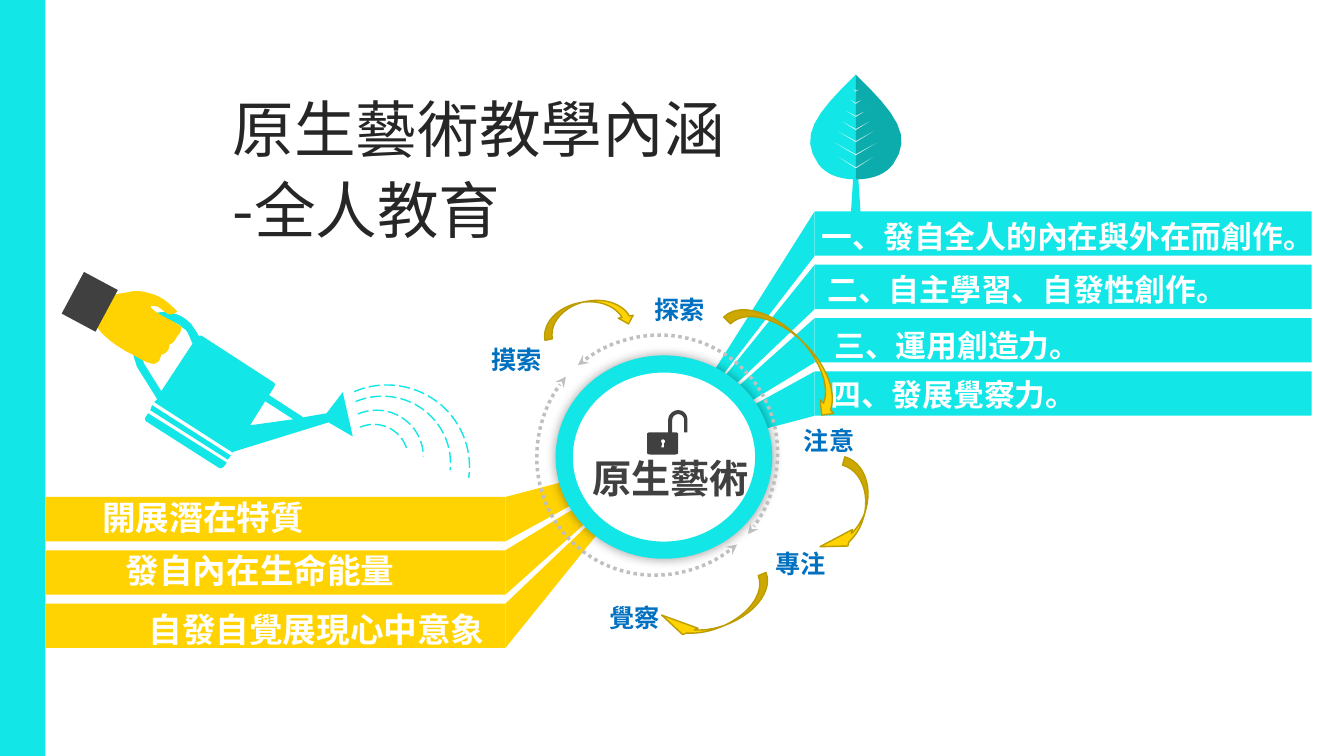
import pptx
import pptx.dml.color
import pptx.enum.dml
import pptx.enum.shapes
import pptx.enum.text
import pptx.oxml.ns
import pptx.util
from lxml import etree

Pt = pptx.util.Pt
RGBColor = pptx.dml.color.RGBColor
Preset = pptx.enum.shapes.MSO_SHAPE
Dash = pptx.enum.dml.MSO_LINE
Align = pptx.enum.text.PP_ALIGN

CYAN = RGBColor(0x12, 0xE6, 0xE6)
DARK_CYAN = RGBColor(0x0D, 0xAC, 0xAC)
YELLOW = RGBColor(0xFF, 0xD3, 0x02)
GOLD = RGBColor(0xBD, 0x9C, 0x01)
WHITE = RGBColor(0xFF, 0xFF, 0xFF)
INK = RGBColor(0x26, 0x26, 0x26)
CHARCOAL = RGBColor(0x40, 0x40, 0x40)
GRAY = RGBColor(0xBF, 0xBF, 0xBF)
BLUE = RGBColor(0x00, 0x70, 0xC0)
FONT = "Noto Sans CJK JP"

# Outlines: pairs are corners, sixes are cubic curves, all in points from the box corner.
LOCK = [
    [(11.5, 20.9), (10.1, 20.9, 10.1, 21.6, 10.1, 22.3), (10.1, 23, 10.8, 23.8, 10.8, 23.8),
     (10.1, 26.6), (12.2, 26.6), (12.2, 23.8), (12.2, 23.8, 13, 23, 13, 22.3),
     (13, 21.6, 12.2, 20.9, 11.5, 20.9)],
    [(22.3, 0), (25.9, 0, 28.8, 2.9, 28.8, 6.5), (28.8, 15.8), (26.6, 15.8), (26.6, 6.5),
     (25.9, 4.3, 24.5, 2.9, 22.3, 2.9), (20.2, 2.9, 18, 4.3, 18, 7.2), (18, 15.8), (20.2, 15.8),
     (21.6, 15.8, 22.3, 16.6, 22.3, 17.3), (22.3, 30.2), (22.3, 31, 21.6, 31.7, 20.2, 31.7),
     (2.2, 31.7), (0.7, 31.7, 0, 31, 0, 30.2), (0, 17.3), (0, 16.6, 0.7, 15.8, 2.2, 15.8),
     (15.1, 15.8), (15.1, 7.2), (15.1, 2.9, 18.7, 0, 22.3, 0)],
]
CAN = [
    [(69.8, 115.2), (126, 150.5), (123.8, 153.4), (123.1, 154.1, 121.7, 154.8, 120.2, 154.1),
     (68.4, 121), (67.7, 120.2, 67, 118.8, 68.4, 117.4)],
    [(72.7, 109.4), (128.9, 145.4), (126.7, 148.3), (71.3, 113)],
    [(153.4, 106.6), (142.6, 123.8), (173.5, 119.5)],
    [(92.9, 52.6), (90, 50.4, 85.7, 49, 81.4, 49), (77.8, 49, 74.9, 49, 72, 51.1),
     (67.7, 54, 64.8, 58.3, 64.1, 63.4), (63.4, 67.7), (64.1, 71.3, 65.5, 75.6, 67, 79.9),
     (79.2, 99.4), (101.5, 65.5), (99.4, 60.5), (98.6, 59, 97.9, 56.9, 96.5, 55.4),
     (95, 54.7, 94.3, 54, 92.9, 52.6)],
    [(208.8, 100.1), (216, 131.8), (198.7, 121.7), (131, 142.6), (130.3, 143.3), (74.2, 107.3),
     (76.3, 105.1), (61.9, 82.1), (60.5, 77.8), (59, 73.4, 58.3, 69.8, 58.3, 65.5),
     (58.3, 61.9, 58.3, 59, 60.5, 56.2), (63.4, 50.4, 68.4, 46.1, 74.2, 43.9),
     (80.6, 41.8, 89.3, 43.2, 95, 46.8), (97.2, 48.2, 99.4, 50.4, 100.8, 51.8),
     (102.2, 54, 103.7, 56.2, 105.1, 58.3), (105.8, 59.8), (108, 59.8), (159.1, 92.9),
     (160.6, 93.6, 160.6, 95, 159.8, 96.5), (156.2, 102.2), (180.7, 118.1), (197.3, 115.2)],
]
HAND = [
    [(90.7, 42.5), (83.5, 49, 79.9, 38.9, 75.6, 38.9), (73.4, 38.2, 70.6, 38.2, 72, 39.6),
     (72, 41, 79.2, 45.4, 86.4, 49), (93.6, 53.3), (93.6, 56.2, 92.2, 59, 90.7, 59.8),
     (88.6, 64.1, 87.8, 64.8, 85, 66.2), (85, 70.6, 82.1, 72.7, 79.2, 73.4),
     (77.8, 77.8, 77.8, 78.5, 74.2, 79.9), (70.6, 79.9, 66.2, 77.8, 59, 73.4),
     (55.4, 72, 39.6, 63.4, 33.1, 53.3), (30.2, 49, 29.5, 49.7, 27.4, 49), (38.9, 27.4),
     (42.5, 28.8, 43.2, 31, 47.5, 30.2), (49.7, 29.5, 52.6, 29.5, 58.3, 28.1),
     (64.8, 27.4, 68.4, 28.8, 73.4, 30.2), (79.9, 32.4, 84.2, 36, 90.7, 42.5)],
]
VEINS = [(11.5, 3.6, 9.4), (20.2, 6.5, 16.6), (29.5, 10.8, 23.8), (38.9, 16.6, 29.5),
         (47.5, 21.6, 35.3), (56.9, 25.9, 42.5), (66.2, 21.6, 53.3)]


def set_values(target, values):
    for name, value in values.items():
        setattr(target, name, value)


def paint(shape, fill=None, line=None, width=1, dash=None):
    shape.shadow.inherit = False
    for part, color in ((shape.fill, fill), (shape.line.fill, line)):
        if color is None:
            part.background()
        else:
            part.solid()
            part.fore_color.rgb = color
    if line is not None:
        set_values(shape.line, {"width": Pt(width), "dash_style": dash})


def add_preset(slide, preset, box, rotation=0, adjustments=(), **style):
    shape = slide.shapes.add_shape(preset, *(Pt(length) for length in box))
    shape.rotation = rotation
    for index, value in enumerate(adjustments):
        shape.adjustments[index] = value
    paint(shape, **style)
    return shape


def flatten(outline, steps=8):
    """Turn corners and cubic curves into a list of points."""
    points = []
    for item in outline:
        if len(item) == 2:
            points.append(item)
            continue
        control = [points[-1], item[:2], item[2:4], item[4:]]
        for step in range(1, steps + 1):
            t = step / steps
            weights = ((1 - t) ** 3, 3 * t * (1 - t) ** 2, 3 * t * t * (1 - t), t ** 3)
            points.append(tuple(sum(w * p[axis] for w, p in zip(weights, control)) for axis in (0, 1)))
    return points


def add_outline(slide, outlines, left, top, color, mirror=1):
    builder = None
    for outline in outlines:
        points = [(Pt(left + mirror * x), Pt(top + y)) for x, y in flatten(outline)]
        if builder is None:
            builder = slide.shapes.build_freeform(*points[0])
        else:
            builder.move_to(*points[0])
        builder.add_line_segments(points[1:], close=True)
    paint(builder.convert_to_shape(), fill=color)


def write(paragraph, text, size, color, bold=True):
    run = paragraph.add_run()
    run.text = text
    set_values(run.font, {"name": FONT, "size": Pt(size), "bold": bold})
    run.font.color.rgb = color
    east_asian = etree.SubElement(run.font._element, pptx.oxml.ns.qn("a:ea"))
    east_asian.set("typeface", FONT)


def add_label(slide, box, text, size, color, alignment=Align.LEFT):
    frame = slide.shapes.add_textbox(*(Pt(length) for length in box)).text_frame
    frame.word_wrap = True
    frame.paragraphs[0].alignment = alignment
    write(frame.paragraphs[0], text, size, color)


def add_title(slide, box, lines):
    title = slide.shapes.title
    set_values(title, dict(zip(("left", "top", "width", "height"), map(Pt, box))))
    frame = title.text_frame
    set_values(frame, {"word_wrap": True, "auto_size": pptx.enum.text.MSO_AUTO_SIZE.NONE,
                       "vertical_anchor": pptx.enum.text.MSO_ANCHOR.MIDDLE})
    for index, line in enumerate(lines):
        paragraph = frame.add_paragraph() if index else frame.paragraphs[0]
        set_values(paragraph, {"alignment": Align.LEFT, "line_spacing": 0.9,
                               "space_before": Pt(10 if index else 0)})
        write(paragraph, line, 44, INK, bold=False)


def add_bands(slide, box, inner, hub, color, size, labels):
    """Stack bands in the box, each with a wedge from its inner side to the hub."""
    left, top, width, pitch = box
    height = 31.7
    for row in range(len(labels)):
        y = top + row * pitch
        add_preset(slide, Preset.RECTANGLE, (left, y, width, height), fill=color)
        add_outline(slide, [[(inner, y), hub, (inner, y + height)]], 0, 0, color)
    for row, (dx, dy, label_width, text) in enumerate(labels):
        add_label(slide, (left + dx, top + row * pitch + dy, label_width, 35), text, size, WHITE)


def add_watering_can(slide, left, top):
    add_outline(slide, CAN, left, top, CYAN)
    add_outline(slide, HAND, left, top, YELLOW)
    add_preset(slide, Preset.RECTANGLE, (left + 14.4, top + 18.7, 27.4, 33.8), 28.2, fill=CHARCOAL)
    for x, y, width, height, end in ((181.4, 95, 118, 116.6, 4.71), (188.6, 103, 97.2, 95.8, 3.5),
                                     (199.4, 113, 67, 66.2, 0), (206.6, 123.1, 49, 49, 207.81)):
        add_preset(slide, Preset.ARC, (left + x, top + y, width, height),
                   adjustments=(147.86, end), line=CYAN, dash=Dash.LONG_DASH)


def add_leaf(slide, center, top):
    add_preset(slide, Preset.TRAPEZOID, (center - 3.6, top + 73.4, 7.2, 27.4), fill=CYAN)
    half = [(0, 0)]
    for base, reach, tip in VEINS:
        half += [(0, base), (reach, tip), (0, base + 0.8)]
    half += [(0, 74.9), (13, 74.9, 21.6, 70.6, 26.6, 64.1), (41, 43.9, 28.8, 28.1, 0, 0)]
    for mirror, color in ((-1, CYAN), (1, DARK_CYAN)):
        add_outline(slide, [half], center, top, color, mirror)


def add_cycle(slide, left, top):
    """Place the hub, its dotted orbit and the five stages around it."""
    qn = pptx.oxml.ns.qn
    ring = add_preset(slide, Preset.OVAL, (left + 63, top + 60, 142.5, 133), fill=WHITE, line=CYAN, width=12.25)
    effects = ring._element.spPr.find(qn("a:effectLst"))
    shadow = etree.SubElement(effects, qn("a:outerShdw"), blurRad=str(Pt(8)), dist="0")
    black = etree.SubElement(shadow, qn("a:srgbClr"), val="000000")
    etree.SubElement(black, qn("a:alpha"), val="40000")
    for x, y, rotation in ((45.2, 33.3, 224.1), (41.6, 37.6, 44.5)):
        orbit = add_preset(slide, Preset.ARC, (left + x, top + y, 172, 179.3), rotation,
                           (111.57, 212.83), line=GRAY, width=2.5, dash=Dash.ROUND_DOT)
        line = orbit.line._get_or_add_ln()
        for end in ("a:headEnd", "a:tailEnd"):
            etree.SubElement(line, qn(end), type="stealth")
    add_label(slide, (left + 72, top + 121.1, 134, 41), "原生藝術", 28, CHARCOAL, Align.CENTER)
    add_outline(slide, LOCK, left + 122.2, top + 93, CHARCOAL)
    for center, y, text in ((29, 42.6, "摸索"), (145.6, 6.6, "探索"), (232, 188, "專注"),
                            (252.2, 100.2, "注意"), (113.2, 227, "覺察")):
        add_label(slide, (left + center - 30, top + y, 60, 29), text, 18, BLUE, Align.CENTER)
    down, sideways = Preset.CURVED_DOWN_ARROW, Preset.CURVED_LEFT_ARROW
    for preset, x, y, width, height, rotation, adjustments in (
            (down, 46.6, 15.3, 66.2, 21.6, 348.9, ()),
            (sideways, 253.3, 128.3, 24.5, 72.7, 15.5, (0.25, 0.5, 0.78)),
            (sideways, 159.7, 193.1, 23.8, 86.4, 67.8, (0.25, 0.5, 0.78)),
            (down, 171.2, 40.5, 105.8, 27.4, 45, ())):
        add_preset(slide, preset, (left + x, top + y, width, height), rotation, adjustments,
                   fill=YELLOW, line=GOLD)


def main():
    presentation = pptx.Presentation()
    set_values(presentation, {"slide_width": Pt(960), "slide_height": Pt(540)})
    slide = presentation.slides.add_slide(presentation.slide_layouts[5])
    add_preset(slide, Preset.RECTANGLE, (0, 0, 32.4, 540), fill=CYAN)
    add_title(slide, (159, 95, 478, 57), ("原生藝術教學內涵", "-全人教育"))
    hub = (471.5, 326)
    add_bands(slide, (582, 151, 355, 38.1), 582, hub, CYAN, 22, (
        (-2, 1, 376, "一、發自全人的內在與外在而創作。"), (2, 0.8, 300, "二、自主學習、自發性創作。"),
        (7, 2.5, 231, "三、運用創造力。"), (4, -0.3, 231, "四、發展覺察力。")))
    add_bands(slide, (32.4, 355, 328.6, 38.1), 361, hub, YELLOW, 24, (
        (33.6, -3.6, 219, "開展潛在特質"), (50.4, -3.6, 219, "發自內在生命能量"),
        (66.6, 0, 276, "自發自覺展現心中意象")))
    add_watering_can(slide, 36, 180)
    add_leaf(slide, 611.3, 53.3)
    add_cycle(slide, 340, 200)
    presentation.save("out.pptx")


if __name__ == "__main__":
    main()
